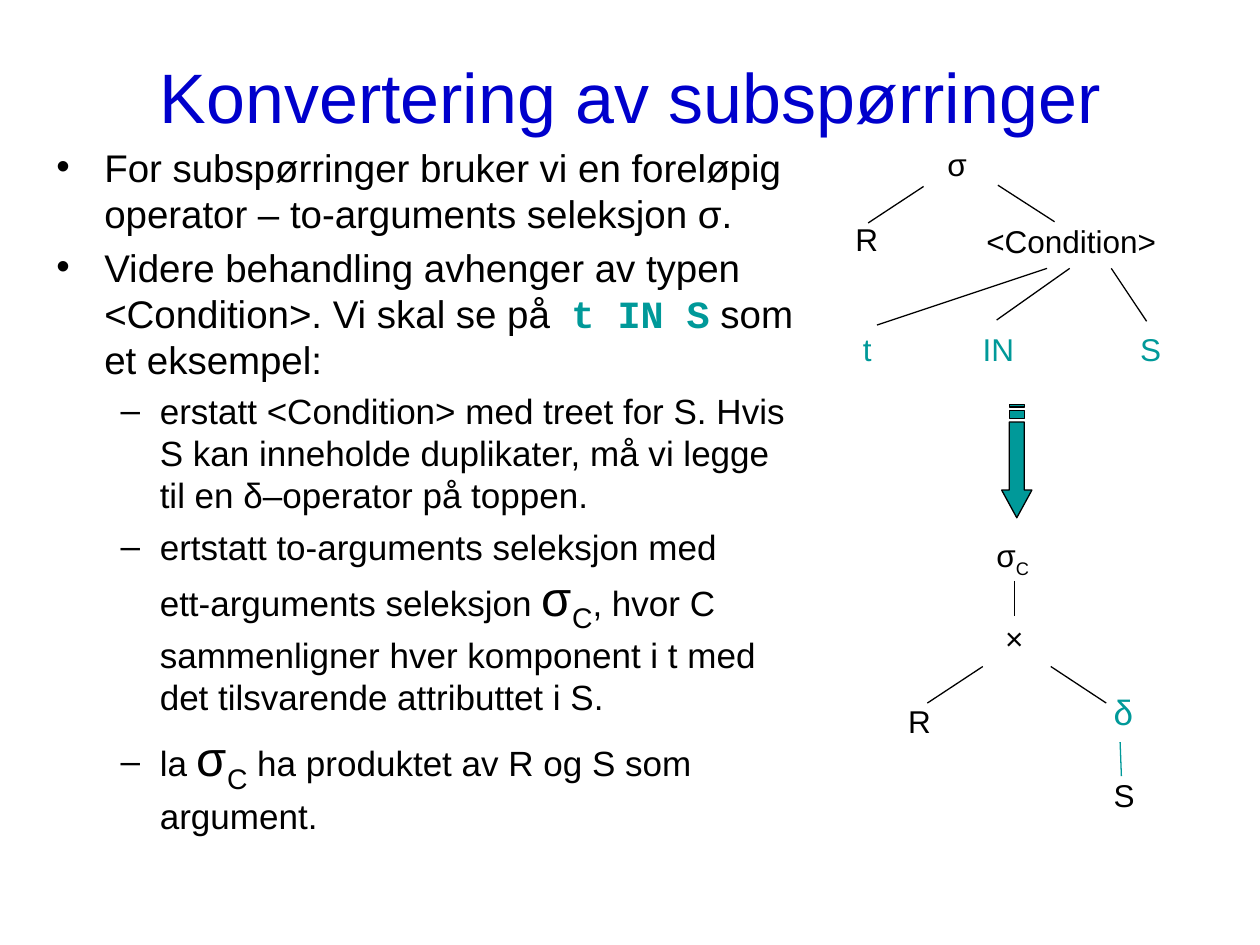
from typing import NamedTuple

from lxml import etree
from pptx import Presentation
from pptx.dml.color import RGBColor
from pptx.enum.shapes import MSO_CONNECTOR
from pptx.enum.text import MSO_ANCHOR, MSO_AUTO_SIZE, PP_ALIGN
from pptx.oxml.ns import qn
from pptx.util import Pt

STRAIGHT = MSO_CONNECTOR.STRAIGHT
TOP, MIDDLE = MSO_ANCHOR.TOP, MSO_ANCHOR.MIDDLE
CENTER = PP_ALIGN.CENTER
NO_AUTOFIT = MSO_AUTO_SIZE.NONE
TITLE_ONLY = 5

PX = 9144  # 100 px to the inch
BLACK, BLUE, TEAL = "000000", "0000CC", "009999"
SANS, MONO = "Arial", "Courier New"


class Piece(NamedTuple):
    text: str
    size: int
    color: str = BLACK
    font: str = SANS
    bold: bool = False
    subscript: bool = False


class Bullet(NamedTuple):
    level: int
    space_before: float
    pieces: list[Piece]


class Label(NamedTuple):
    left: int
    top: int
    width: int
    height: int
    pieces: list[Piece]


class Edge(NamedTuple):
    x1: int
    y1: int
    x2: int
    y2: int
    color: str = BLACK


SIGMA_C = [Piece("σ", 28), Piece("C", 28, subscript=True)]

BULLETS = [
    Bullet(0, 0, [Piece("For subspørringer bruker vi en foreløpig operator – "
                        "to-arguments seleksjon σ.", 22)]),
    Bullet(0, 4.4, [
        Piece("Videre behandling avhenger av typen <Condition>. Vi skal se på  ", 22),
        Piece("t IN S", 22, TEAL, MONO, bold=True),
        Piece(" som et eksempel:", 22)]),
    Bullet(1, 4, [Piece("erstatt <Condition> med treet for S. Hvis S kan inneholde "
                        "duplikater, må vi legge til en δ–operator på toppen.", 20)]),
    Bullet(1, 5.6, [
        Piece("ertstatt to-arguments seleksjon med \nett-arguments seleksjon ", 20),
        *SIGMA_C,
        Piece(", hvor C\nsammenligner hver komponent i t med det tilsvarende "
              "attributtet i S.", 20)]),
    Bullet(1, 5.6, [Piece("la ", 20), *SIGMA_C,
                    Piece(" ha produktet av R og S som argument.", 20)]),
]
BULLET_STYLES = [("•", 38, 38), ("–", 82, 31)]  # character, margin, hanging

LABELS = [
    # Tree with the two-argument selection
    Label(742, 117, 35, 27, [Piece("σ", 18)]),
    Label(669, 170, 36, 40, [Piece("R", 18)]),
    Label(773, 171, 160, 40, [Piece("<Condition>", 18)]),
    Label(675, 257, 28, 40, [Piece("t", 18, TEAL)]),
    Label(770, 257, 46, 40, [Piece("IN", 18, TEAL)]),
    Label(895, 257, 34, 40, [Piece("S", 18, TEAL)]),
    # Tree with the one-argument selection
    Label(781, 429, 48, 27, [Piece("σ", 18), Piece("C", 18, subscript=True)]),
    Label(788, 492, 34, 28, [Piece("×", 18)]),
    Label(711, 552, 36, 40, [Piece("R", 18)]),
    Label(874, 543, 34, 43, [Piece("δ", 20, TEAL)]),
    Label(874, 611, 34, 40, [Piece("S", 18)]),
]

EDGES = [
    Edge(733, 148, 689, 177), Edge(792, 147, 837, 176),
    Edge(831, 213, 696, 258), Edge(849, 213, 791, 254), Edge(882, 213, 910, 255),
    Edge(805, 461, 805, 489),
    Edge(780, 529, 736, 558), Edge(834, 529, 878, 558),
    Edge(889, 589, 890, 616, TEAL),
]

# Striped arrow: two bars above a shaft with a head
SHAFT_LEFT, SHAFT_RIGHT = 801, 813
ARROW_BARS = [(321, 323), (326, 332)]  # top, bottom
ARROW_BODY = [(SHAFT_LEFT, 335), (SHAFT_RIGHT, 335), (SHAFT_RIGHT, 389), (819, 389),
              (807, 411), (795, 389), (SHAFT_LEFT, 389)]


def rgb(color: str) -> RGBColor:
    return RGBColor.from_string(color)


def format_run(run, piece: Piece) -> None:
    font = run.font
    font.size, font.name, font.bold = Pt(piece.size), piece.font, piece.bold
    font.color.rgb = rgb(piece.color)
    if piece.subscript:
        run._r.get_or_add_rPr().set("baseline", "-25000")


def write_pieces(paragraph, pieces: list[Piece]) -> None:
    for piece in pieces:
        for index, line in enumerate(piece.text.split("\n")):
            if index:
                paragraph.add_line_break()
            run = paragraph.add_run()
            run.text = line
            format_run(run, piece)


def add_text_frame(slide, left: int, top: int, width: int, height: int, anchor):
    box = slide.shapes.add_textbox(left * PX, top * PX, width * PX, height * PX)
    frame = box.text_frame
    frame.word_wrap = True
    frame.auto_size = NO_AUTOFIT
    frame.vertical_anchor = anchor
    return frame


def add_title(slide, text: str) -> None:
    title = slide.shapes.title
    title.left, title.top, title.width, title.height = 50 * PX, 30 * PX, 900 * PX, 92 * PX
    frame = title.text_frame
    frame.text = text
    frame.auto_size = NO_AUTOFIT
    frame.vertical_anchor = MIDDLE
    frame.paragraphs[0].alignment = CENTER
    format_run(frame.paragraphs[0].runs[0], Piece(text, 40, BLUE))


def add_bullets(slide, bullets: list[Bullet]) -> None:
    frame = add_text_frame(slide, 35, 109, 610, 610, TOP)
    for index, bullet in enumerate(bullets):
        paragraph = frame.add_paragraph() if index else frame.paragraphs[0]
        character, margin, hanging = BULLET_STYLES[bullet.level]
        paragraph.level = bullet.level
        paragraph.space_before = Pt(bullet.space_before)
        properties = paragraph._p.get_or_add_pPr()
        properties.set("marL", str(margin * PX))
        properties.set("indent", str(-hanging * PX))
        etree.SubElement(properties, qn("a:buFont"), typeface=SANS)
        etree.SubElement(properties, qn("a:buChar"), char=character)
        write_pieces(paragraph, bullet.pieces)


def add_label(slide, label: Label) -> None:
    frame = add_text_frame(slide, *label[:4], MIDDLE)
    frame.margin_right = frame.margin_top = frame.margin_bottom = 0
    write_pieces(frame.paragraphs[0], label.pieces)


def add_edge(slide, edge: Edge) -> None:
    ends = [value * PX for value in edge[:4]]
    connector = slide.shapes.add_connector(STRAIGHT, *ends)
    connector.line.color.rgb = rgb(edge.color)
    connector.line.width = Pt(0.75)
    etree.SubElement(connector._element.spPr, qn("a:effectLst"))


def add_striped_arrow(slide) -> None:
    builder = slide.shapes.build_freeform(*ARROW_BODY[0], scale=PX)
    builder.add_line_segments(ARROW_BODY[1:], close=True)
    for top, bottom in ARROW_BARS:
        builder.move_to(SHAFT_LEFT, top)
        builder.add_line_segments(
            [(SHAFT_RIGHT, top), (SHAFT_RIGHT, bottom), (SHAFT_LEFT, bottom)], close=True)
    arrow = builder.convert_to_shape()
    arrow.shadow.inherit = False
    arrow.fill.solid()
    arrow.fill.fore_color.rgb = rgb(TEAL)
    arrow.line.color.rgb = rgb(BLACK)
    arrow.line.width = Pt(0.75)


def main() -> None:
    presentation = Presentation()
    presentation.slide_width, presentation.slide_height = 1000 * PX, 750 * PX
    slide = presentation.slides.add_slide(presentation.slide_layouts[TITLE_ONLY])

    add_title(slide, "Konvertering av subspørringer")
    add_bullets(slide, BULLETS)

    # Query trees before and after the conversion
    for edge in EDGES:
        add_edge(slide, edge)
    for label in LABELS:
        add_label(slide, label)
    add_striped_arrow(slide)

    presentation.save("out.pptx")


if __name__ == "__main__":
    main()
